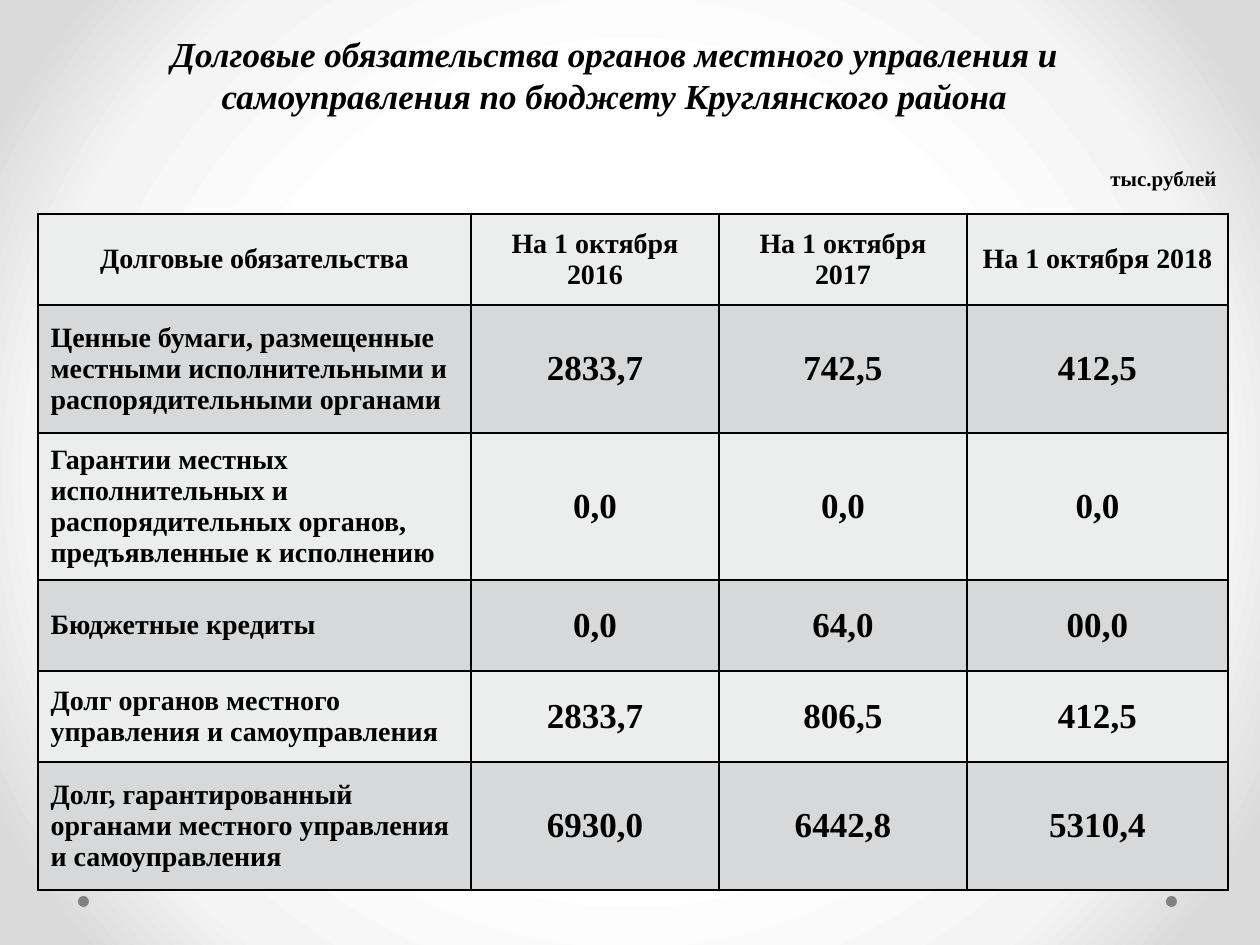
from lxml import etree
from pptx import Presentation
from pptx.dml.color import RGBColor as RGB
from pptx.enum.shapes import MSO_SHAPE as Shape
from pptx.enum.text import MSO_ANCHOR as Anchor, MSO_AUTO_SIZE as Fit, PP_ALIGN as Align
from pptx.oxml import parse_xml
from pptx.oxml.ns import nsdecls, qn
from pptx.util import Pt

UNIT = 914400 / 126  # EMU in one px
COLORS = {"text": "000000", "line": "000000", "dot": "808080",
          "light": "ECEDED", "dark": "D6D8D9"}
STOPS = [(50, "FFFFFF"), (76, "F4F4F4"), (92, "DADADA")]
COLS = [433, 248, 248, 261]
HEIGHTS = [91, 128, 128, 91, 91, 128]
ROWS = [
    ["Долговые обязательства", "На 1 октября 2016", "На 1 октября 2017",
     "На 1 октября 2018"],
    ["Ценные бумаги, размещенные местными исполнительными и распорядительными органами",
     "2833,7", "742,5", "412,5"],
    ["Гарантии местных исполнительных и распорядительных органов, предъявленные к исполнению",
     "0,0", "0,0", "0,0"],
    ["Бюджетные кредиты", "0,0", "64,0", "00,0"],
    ["Долг органов местного управления и самоуправления", "2833,7", "806,5", "412,5"],
    ["Долг, гарантированный органами местного управления и самоуправления",
     "6930,0", "6442,8", "5310,4"],
]


def px(*nums):
    return [round(n * UNIT) for n in nums]


class Page:
    font = "Times New Roman"

    def __init__(self, deck):
        self.slide = deck.slides.add_slide(deck.slide_layouts[6])
        self.shapes = self.slide.shapes

    def glow(self, stops):
        self.slide.background.fill.gradient()
        grad = self.slide.element.find(".//" + qn("a:gradFill"))
        for part in list(grad):
            grad.remove(part)
        items = etree.SubElement(grad, qn("a:gsLst"))
        for pos, color in stops:
            stop = etree.SubElement(items, qn("a:gs"), {"pos": str(pos * 1000)})
            etree.SubElement(stop, qn("a:srgbClr"), {"val": color})
        way = etree.SubElement(grad, qn("a:path"), {"path": "circle"})
        etree.SubElement(way, qn("a:fillToRect"), dict.fromkeys("ltrb", "50000"))

    def dot(self, left, top, size):
        dot = self.shapes.add_shape(Shape.OVAL, *px(left, top, size, size))
        dot.shadow.inherit = False
        dot.fill.solid()
        dot.fill.fore_color.rgb = RGB.from_string(COLORS["dot"])
        dot.line.fill.background()

    def words(self, frame, text, size, align, **form):
        para = frame.paragraphs[0]
        para.alignment = align
        run = para.add_run()
        run.text = text
        look = {"name": self.font, "size": Pt(size), "bold": True, **form}
        for key, value in look.items():
            setattr(run.font, key, value)
        run.font.color.rgb = RGB.from_string(COLORS["text"])

    def label(self, box, text, size, align, wrap=True, **form):
        frame = self.shapes.add_textbox(*px(*box)).text_frame
        frame.word_wrap = wrap
        frame.auto_size = Fit.SHAPE_TO_FIT_TEXT
        self.words(frame, text, size, align, **form)

    def cell(self, cell, text, size, align, fill):
        cell.vertical_anchor = Anchor.MIDDLE
        cell.fill.solid()
        cell.fill.fore_color.rgb = RGB.from_string(COLORS[fill])
        self.words(cell.text_frame, text, size, align)
        props = cell._tc.get_or_add_tcPr()
        for spot, side in enumerate("LRTB"):
            props.insert(spot, parse_xml(
                f'<a:ln{side} {nsdecls("a")} w="12700"><a:solidFill>'
                f'<a:srgbClr val="{COLORS["line"]}"/></a:solidFill></a:ln{side}>'))

    def table(self, left, top, cols, heights, rows):
        box = px(left, top, sum(cols), sum(heights))
        table = self.shapes.add_table(len(rows), len(cols), *box).table
        table.first_row = table.horz_banding = False
        for col, width in zip(table.columns, px(*cols)):
            col.width = width
        for row, height in zip(table.rows, px(*heights)):
            row.height = height
        for r, texts in enumerate(rows):
            fill = "dark" if r % 2 else "light"
            for c, text in enumerate(texts):
                size = 20 if r and c else 16
                align = Align.LEFT if r and not c else Align.CENTER
                self.cell(table.cell(r, c), text, size, align, fill)


def main():
    deck = Presentation()
    deck.slide_width, deck.slide_height = px(1260, 945)
    page = Page(deck)

    # Background and corner dots
    page.glow(STOPS)
    for left in (1166, 78):
        page.dot(left, 896, 11)

    # Title
    page.label((64, 26, 1101, 97),
               "Долговые обязательства органов местного управления и "
               "самоуправления по бюджету Круглянского района",
               20, Align.CENTER, italic=True)

    # Debt table and its unit
    page.table(38, 214, COLS, HEIGHTS, ROWS)
    page.label((1097, 159, 132, 38), "тыс.рублей", 12, Align.RIGHT, wrap=False)

    deck.save("out.pptx")


if __name__ == "__main__":
    main()
